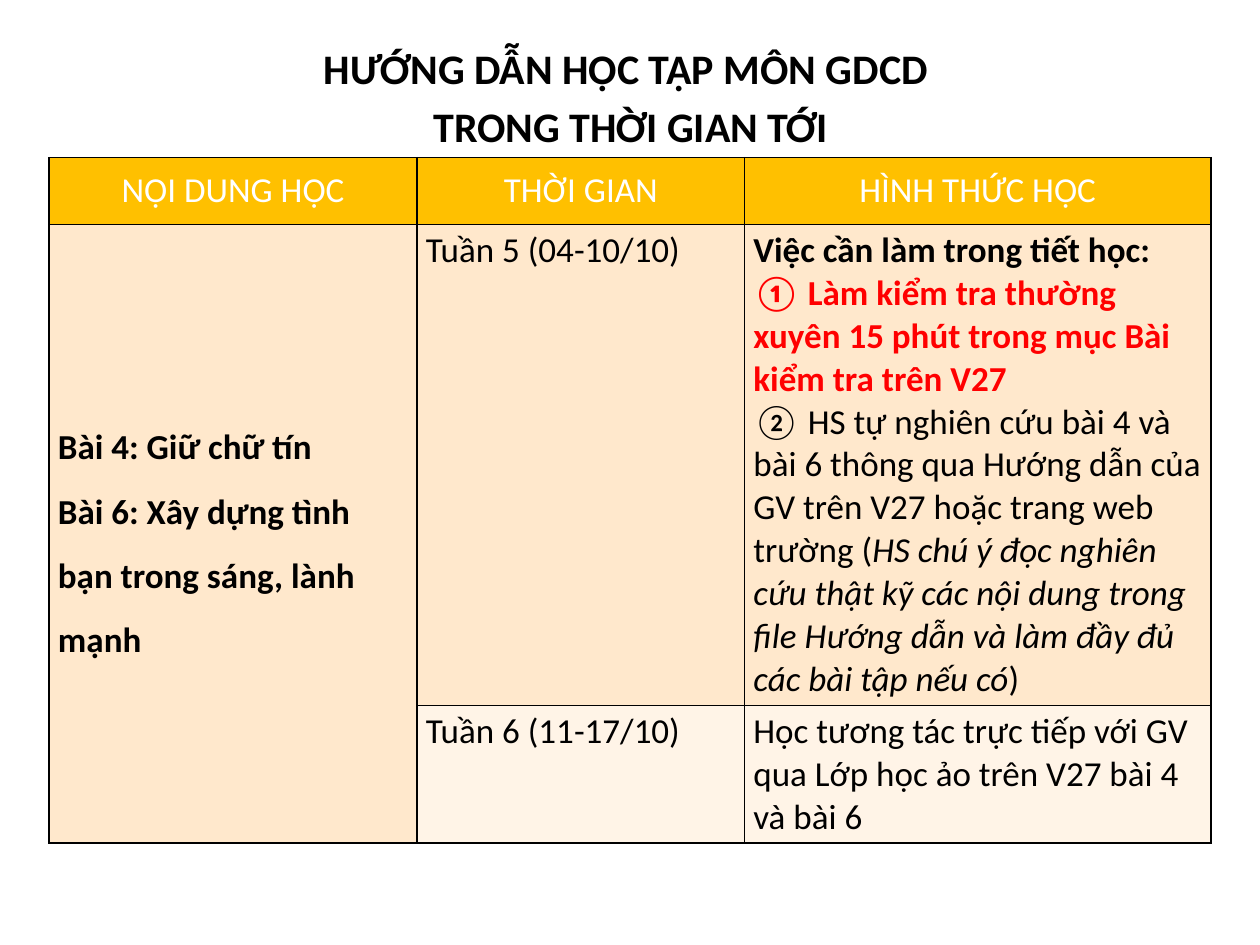
from dataclasses import dataclass

from lxml.etree import SubElement
from pptx import Presentation
from pptx.dml.color import RGBColor
from pptx.enum.text import MSO_ANCHOR as Anchor, PP_ALIGN as Align
from pptx.oxml.ns import qn
from pptx.util import Inches, Pt

FONT = "Calibri"
COLORS = {
    "text": "000000",
    "header_text": "FFFFFF",
    "alert": "FF0000",
    "header": "FFC000",
    "band": "FFE8CC",
    "light_band": "FFF4E7",
    "border": "000000",
}


@dataclass
class Span:
    text: str
    color: str = "text"
    bold: bool = False
    italic: bool = False


@dataclass
class CellContent:
    row: int
    column: int
    paragraphs: list[list[Span]]
    fill: str
    align: Align = Align.LEFT
    anchor: Anchor = Anchor.TOP
    line_spacing: float = 1.0


TITLE = [
    [Span("HƯỚNG DẪN HỌC TẬP MÔN GDCD ", bold=True)],
    [Span("TRONG THỜI GIAN TỚI", bold=True)],
]
HEADERS = ["NỘI DUNG HỌC", "THỜI GIAN", "HÌNH THỨC HỌC"]
COLUMN_WIDTHS = [2.92, 2.6, 3.7]
ROW_HEIGHTS = [0.53, 3.82, 1.09]

CELLS = [
    CellContent(0, column, [[Span(header, "header_text")]], "header", Align.CENTER, Anchor.MIDDLE)
    for column, header in enumerate(HEADERS)
] + [
    CellContent(1, 0, [
        [Span("Bài 4: Giữ chữ tín", bold=True)],
        [Span("Bài 6: Xây dựng tình bạn trong sáng, lành mạnh", bold=True)],
    ], "band", anchor=Anchor.MIDDLE, line_spacing=1.5),
    CellContent(1, 1, [[Span("Tuần 5 (04-10/10)")]], "band"),
    CellContent(1, 2, [
        [Span("Việc cần làm trong tiết học:", bold=True)],
        [Span("① Làm kiểm tra thường xuyên 15 phút trong mục Bài kiểm tra trên V27",
              "alert", bold=True)],
        [
            Span("② HS tự nghiên cứu bài 4 và bài 6 thông qua Hướng dẫn của GV "
                 "trên V27 hoặc trang web trường ("),
            Span("HS chú ý đọc nghiên cứu thật kỹ các nội dung trong file "
                 "Hướng dẫn và làm đầy đủ các bài tập nếu có", italic=True),
            Span(")"),
        ],
    ], "band"),
    CellContent(2, 1, [[Span("Tuần 6 (11-17/10)")]], "light_band"),
    CellContent(2, 2, [
        [Span("Học tương tác trực tiếp với GV qua Lớp học ảo trên V27 bài 4 và bài 6")],
    ], "light_band"),
]


def rgb(name: str) -> RGBColor:
    return RGBColor.from_string(COLORS[name])


def write_paragraphs(frame, paragraphs: list[list[Span]], size: int, align: Align,
                     line_spacing: float, space_before: float = 0) -> None:
    for index, spans in enumerate(paragraphs):
        para = frame.paragraphs[0] if index == 0 else frame.add_paragraph()
        para.alignment = align
        para.line_spacing = line_spacing
        para.space_before = Pt(space_before)
        for span in spans:
            run = para.add_run()
            run.text = span.text
            run.font.name = FONT
            run.font.size = Pt(size)
            run.font.bold = span.bold
            run.font.italic = span.italic
            run.font.color.rgb = rgb(span.color)


def add_borders(cell) -> None:
    """Outline all four sides; must run before the cell's fill is set."""
    properties = cell._tc.get_or_add_tcPr()
    for side in ("lnL", "lnR", "lnT", "lnB"):
        line = SubElement(properties, qn(f"a:{side}"), w=str(Pt(1)))
        fill = SubElement(line, qn("a:solidFill"))
        SubElement(fill, qn("a:srgbClr"), val=COLORS["border"])


def fill_cell(cell, content: CellContent) -> None:
    cell.fill.solid()
    cell.fill.fore_color.rgb = rgb(content.fill)
    cell.vertical_anchor = content.anchor
    cell.margin_left = cell.margin_right = Inches(0.07)
    cell.margin_top = cell.margin_bottom = Inches(0.04)
    write_paragraphs(cell.text_frame, content.paragraphs, 20, content.align, content.line_spacing)


def add_title(slide) -> None:
    box = slide.shapes.add_textbox(Inches(0.56), Inches(0.33), Inches(8.89), Inches(0.92))
    box.text_frame.word_wrap = True
    write_paragraphs(box.text_frame, TITLE, 24, Align.CENTER, 0.9, 7.5)


def add_schedule(slide) -> None:
    table = slide.shapes.add_table(
        len(ROW_HEIGHTS), len(COLUMN_WIDTHS), Inches(0.39), Inches(1.25),
        Inches(sum(COLUMN_WIDTHS)), Inches(sum(ROW_HEIGHTS))).table
    for column, width in zip(table.columns, COLUMN_WIDTHS):
        column.width = Inches(width)
    for row, height in zip(table.rows, ROW_HEIGHTS):
        row.height = Inches(height)
    table.cell(1, 0).merge(table.cell(2, 0))
    for cell in table.iter_cells():
        add_borders(cell)
    for content in CELLS:
        fill_cell(table.cell(content.row, content.column), content)


def main() -> None:
    deck = Presentation()
    deck.slide_width, deck.slide_height = Inches(10), Inches(7.5)
    slide = deck.slides.add_slide(deck.slide_layouts[6])
    add_title(slide)
    add_schedule(slide)
    deck.save("out.pptx")


if __name__ == "__main__":
    main()
